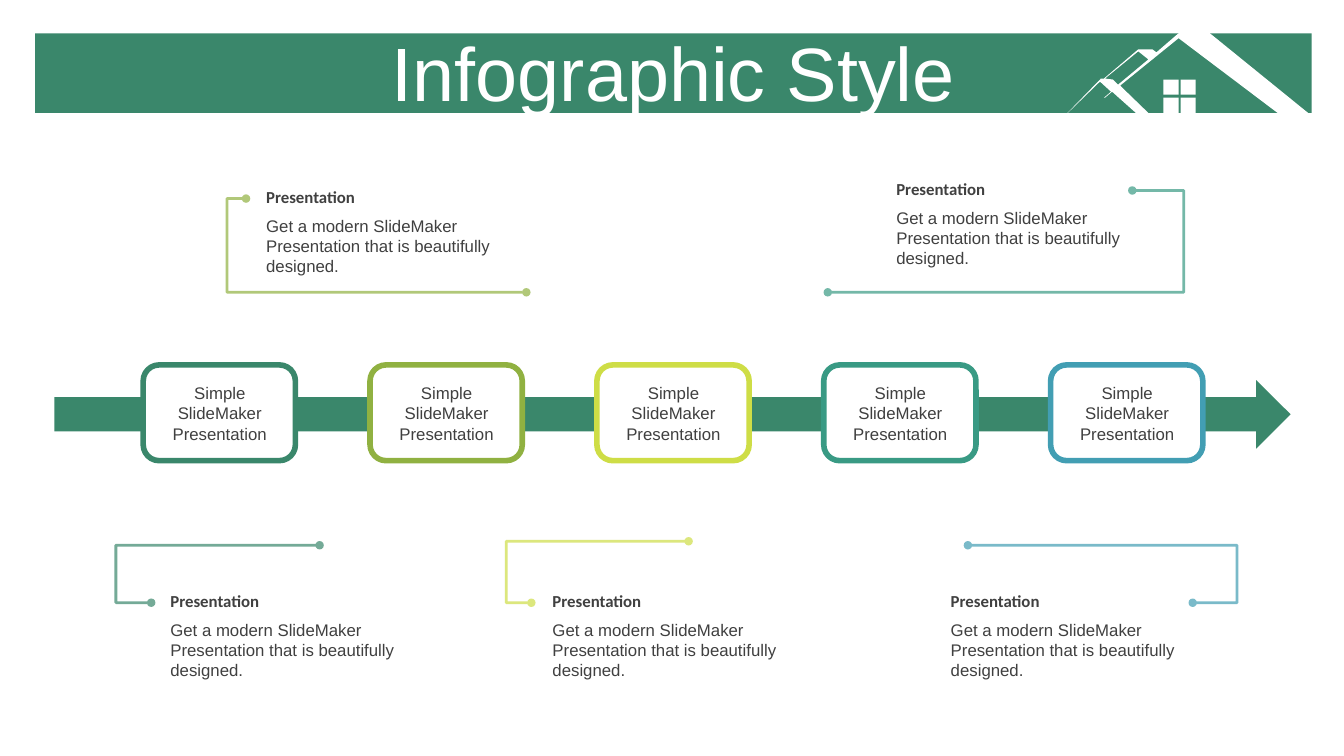
from dataclasses import dataclass

from lxml import etree
from pptx import Presentation
from pptx import util as u
from pptx.dml.color import RGBColor
from pptx.enum import shapes, text
from pptx.oxml.ns import qn

PX = 9144  # EMU in one px, 100 px to the inch


@dataclass(frozen=True)
class Theme:
    green: str = "3A876B"
    olive: str = "90B141"
    lime: str = "CEDD46"
    teal: str = "399A84"
    blue: str = "429EB3"
    white: str = "FFFFFF"
    ink: str = "404040"
    body_font: str = "Arial"
    heading_font: str = "Calibri"
    title_size: int = 54
    text_size: int = 12
    card_line: int = 4
    bracket_line: int = 2
    bracket_alpha: int = 70


THEME = Theme()
STEP_COLORS = (THEME.green, THEME.olive, THEME.lime, THEME.teal, THEME.blue)
STEP_TEXT = "Simple SlideMaker Presentation"
NOTE_HEADING = "Presentation"
NOTE_TEXT = "Get a modern SlideMaker Presentation that is beautifully designed."
NOTES = ((169, 581), (548, 581), (943, 581), (264, 180), (889, 172))
# color, left end, right end, x of the upright part
BRACKETS = (
    (THEME.green, (150, 598), (317, 541), 115),
    (THEME.lime, (527, 598), (683, 537), 502),
    (THEME.blue, (960, 541), (1183, 598), 1227),
    (THEME.olive, (244, 197), (522, 290), 225),
    (THEME.teal, (821, 290), (1123, 189), 1174),
)
DORMER = ((1129, 51), (1096, 78), (1104, 79), (1109, 84), (1139, 59))
ROOF = (
    (1169, 33), (1200, 33), (1301, 115), (1271, 115), (1169, 38), (1111, 85),
    (1143, 116), (1131, 116), (1103, 91), (1096, 97), (1095, 97), (1102, 91),
    (1091, 81), (1055, 116), (1056, 115), (1092, 78), (1095, 78), (1129, 49),
    (1143, 49), (1147, 52),
)


def px(*lengths):
    return [u.Emu(length * PX) for length in lengths]


def rgb(color):
    return RGBColor.from_string(color)


def write_text(shape, content, *, size=THEME.text_size, font=THEME.body_font,
               color=THEME.ink, bold=False, align=text.PP_ALIGN.LEFT):
    shape.text_frame.word_wrap = True
    paragraph = shape.text_frame.paragraphs[0]
    paragraph.alignment = align
    run = paragraph.add_run()
    run.text = content
    run.font.size = u.Pt(size)
    run.font.name = font
    run.font.bold = bold
    run.font.color.rgb = rgb(color)
    return paragraph


def paint(shape, fill, line=None):
    shape.shadow.inherit = False
    shape.fill.solid()
    shape.fill.fore_color.rgb = rgb(fill)
    if line:
        shape.line.color.rgb = rgb(line)
        shape.line.width = u.Pt(THEME.card_line)
    else:
        shape.line.fill.background()


def add_block(slide, kind, box, fill, line=None):
    shape = slide.shapes.add_shape(kind, *px(*box))
    paint(shape, fill, line)


def add_label(slide, box, content, side_inset=10, **style):
    label = slide.shapes.add_textbox(*px(*box))
    frame = label.text_frame
    frame.margin_left, frame.margin_right = px(side_inset, side_inset)
    frame.auto_size = text.MSO_AUTO_SIZE.SHAPE_TO_FIT_TEXT
    write_text(label, content, **style)


def add_house(slide):
    """Draw roof, dormer and window as one outline with holes."""
    panes = [
        ((x, y), (x + 15, y), (x + 15, y + 15), (x, y + 15))
        for y in (97, 79) for x in (1171, 1154)
    ]
    builder = slide.shapes.build_freeform(*ROOF[0], scale=PX)
    builder.add_line_segments(ROOF[1:], close=True)
    for contour in (DORMER, *panes):
        builder.move_to(*contour[0])
        builder.add_line_segments(contour[1:], close=True)
    paint(builder.convert_to_shape(), THEME.white)


def add_title(slide):
    title = slide.shapes.title
    title.left, title.top, title.width, title.height = px(35, 37, 1266, 79)
    title.text_frame.vertical_anchor = text.MSO_ANCHOR.MIDDLE
    title.text_frame.auto_size = text.MSO_AUTO_SIZE.NONE
    paragraph = write_text(title, "Infographic Style", size=THEME.title_size,
                           color=THEME.white, align=text.PP_ALIGN.CENTER)
    paragraph.line_spacing = 0.9
    paragraph.space_before = u.Pt(10)
    slide.shapes._spTree.append(title._element)  # in front of the banner


def add_bracket(slide, color, start, end, upright):
    """Join two dots by an elbow whose upright part lies outside them."""
    connector = slide.shapes.add_connector(
        shapes.MSO_CONNECTOR.ELBOW, *px(*start, *end))
    connector.line.color.rgb = rgb(color)
    connector.line.width = u.Pt(THEME.bracket_line)
    properties = connector._element.spPr
    bend = round((upright - start[0]) / (end[0] - start[0]) * 100000)
    adjustments = properties.find(qn("a:prstGeom")).get_or_add_avLst()
    etree.SubElement(adjustments, qn("a:gd"), name="adj1", fmla=f"val {bend}")
    line = properties.find(qn("a:ln"))
    etree.SubElement(line.find(".//" + qn("a:srgbClr")), qn("a:alpha"),
                     val=str(THEME.bracket_alpha * 1000))
    for tip in ("a:headEnd", "a:tailEnd"):
        etree.SubElement(line, qn(tip), type="oval")
    etree.SubElement(properties, qn("a:effectLst"))


def add_note(slide, left, top):
    add_label(slide, (left, top, 223, 30), NOTE_HEADING, side_inset=0,
              font=THEME.heading_font, bold=True)
    add_label(slide, (left, top + 29, 224, 71), NOTE_TEXT, side_inset=0)


def add_step(slide, index, color):
    left = 142 + 225 * index
    add_block(slide, shapes.MSO_SHAPE.ROUNDED_RECTANGLE,
              (left, 362, 151, 95), THEME.white, color)
    add_label(slide, (left + 6, 375, 140, 71), STEP_TEXT,
              align=text.PP_ALIGN.CENTER)


def main():
    presentation = Presentation()
    presentation.slide_width, presentation.slide_height = px(1333, 750)
    slide = presentation.slides.add_slide(presentation.slide_layouts[5])
    add_block(slide, shapes.MSO_SHAPE.RECTANGLE, (35, 33, 1266, 79), THEME.green)
    add_house(slide)
    add_block(slide, shapes.MSO_SHAPE.RIGHT_ARROW, (54, 377, 1226, 68), THEME.green)
    add_title(slide)
    for bracket in BRACKETS:
        add_bracket(slide, *bracket)
    for note in NOTES:
        add_note(slide, *note)
    for index, color in enumerate(STEP_COLORS):
        add_step(slide, index, color)
    presentation.save("out.pptx")


if __name__ == "__main__":
    main()
